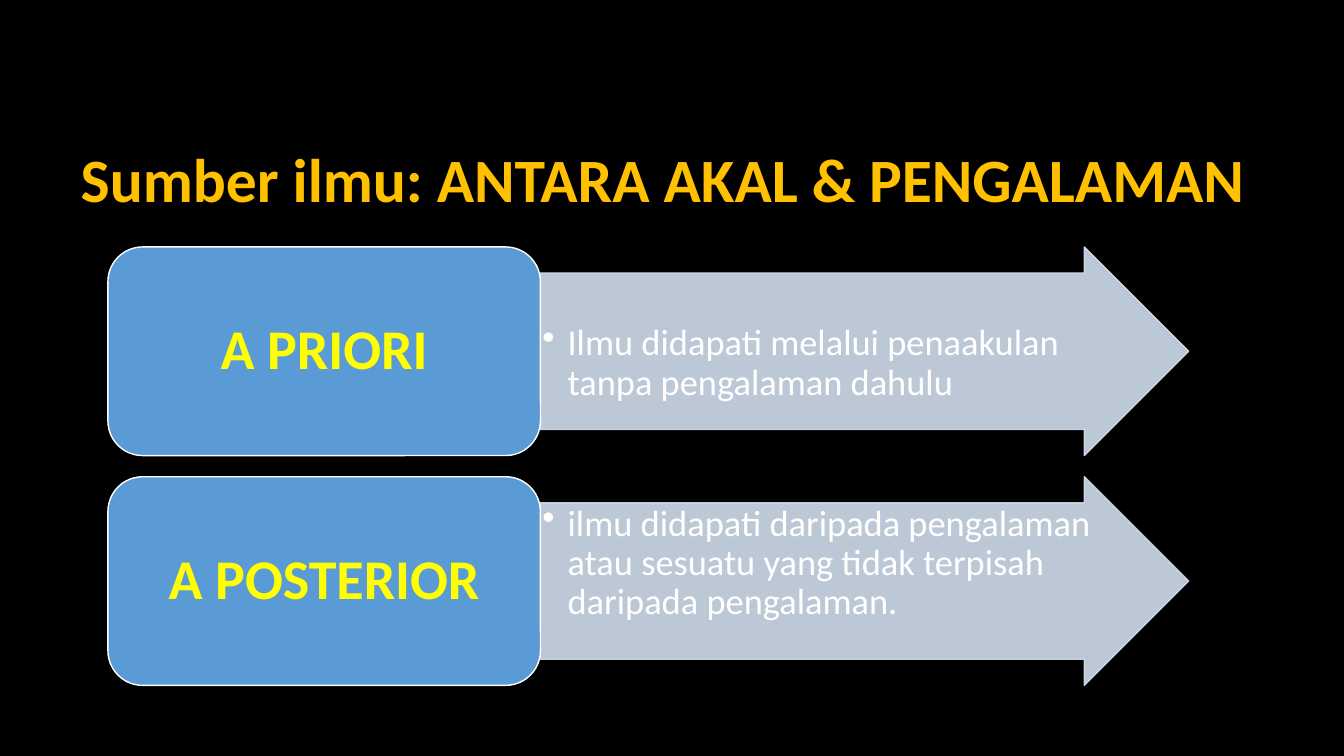
from pptx import Presentation
from pptx.dml.color import RGBColor
from pptx.enum.shapes import MSO_SHAPE as Shape
from pptx.enum.text import MSO_ANCHOR as Anchor, PP_ALIGN as Align
from pptx.oxml.ns import qn
from pptx.util import Inches, Pt
from lxml.etree import SubElement

TITLE = "Sumber ilmu: ANTARA AKAL & PENGALAMAN"
SOURCES = [
    {"name": "A PRIORI", "top_inset": 0.51,
     "meaning": "Ilmu didapati melalui penaakulan tanpa pengalaman dahulu"},
    {"name": "A POSTERIOR", "top_inset": 0.02,
     "meaning": "ilmu didapati daripada pengalaman atau sesuatu yang tidak "
                "terpisah daripada pengalaman."},
]

THEME = {
    "font": "Calibri",
    "background": "000000",
    "arrow": "D2DEEF",
    "card": "5B9BD5",
    "card_line": "FFFFFF",
    "title": {"size": 44, "color": "FFC000", "bold": True},
    "name": {"size": 40, "color": "FFFF00", "bold": True},
    "meaning": {"size": 26, "color": "FFFFFF", "bold": False},
}
TITLE_BOX = (0.56, 1.36, 12.04, 0.9)
LEFT, TOP, CARD_WIDTH, ARROW_WIDTH = 1.07, 2.45, 4.29, 6.43
ROW_HEIGHT, ROW_STEP = 2.07, 2.28


def set_all(target, values):
    for key, value in values.items():
        setattr(target, key, value)


def write(shape, text, style, align, anchor, insets):
    frame = shape.text_frame
    sides = ("margin_left", "margin_top", "margin_right", "margin_bottom")
    set_all(frame, dict(zip(sides, map(Inches, insets))))
    set_all(frame, {"word_wrap": True, "vertical_anchor": anchor})
    para = frame.paragraphs[0]
    set_all(para, {"alignment": align, "line_spacing": 0.9})
    span = para.add_run()
    span.text = text
    set_all(span.font, {"name": THEME["font"], "size": Pt(style["size"]),
                        "bold": style["bold"]})
    span.font.color.rgb = RGBColor.from_string(style["color"])
    return para


def add_block(page, kind, box, fill, line):
    shape = page.shapes.add_shape(kind, *map(Inches, box))
    shape.shadow.inherit = False
    shape.fill.solid()
    shape.fill.fore_color.rgb = RGBColor.from_string(fill)
    shape.line.color.rgb = RGBColor.from_string(line)
    shape.line.width = Pt(1)
    return shape


def set_opacity(shape, percent):
    for color in shape.element.spPr.iter(qn("a:srgbClr")):
        SubElement(color, qn("a:alpha")).set("val", str(percent * 1000))


def add_bullet(para, indent):
    props = para._p.get_or_add_pPr()
    props.set("marL", str(Inches(indent)))
    props.set("indent", str(Inches(-indent)))
    SubElement(props, qn("a:buChar")).set("char", "•")


def add_source(page, source, top):
    arrow = add_block(page, Shape.RIGHT_ARROW,
                      (LEFT + CARD_WIDTH, top, ARROW_WIDTH, ROW_HEIGHT),
                      THEME["arrow"], THEME["arrow"])
    arrow.adjustments[0] = 0.75
    arrow.adjustments[1] = 0.5
    set_opacity(arrow, 90)
    para = write(arrow, source["meaning"], THEME["meaning"], Align.LEFT,
                 Anchor.TOP, (0.02, source["top_inset"], 0.02, 0.02))
    add_bullet(para, 0.25)

    card = add_block(page, Shape.ROUNDED_RECTANGLE,
                     (LEFT, top, CARD_WIDTH, ROW_HEIGHT),
                     THEME["card"], THEME["card_line"])
    write(card, source["name"], THEME["name"], Align.CENTER,
          Anchor.MIDDLE, (0.17, 0.08, 0.17, 0.08))


def main():
    deck = Presentation()
    set_all(deck, {"slide_width": Inches(13.33), "slide_height": Inches(7.5)})
    page = deck.slides.add_slide(deck.slide_layouts[5])
    page.background.fill.solid()
    page.background.fill.fore_color.rgb = RGBColor.from_string(THEME["background"])

    title = page.shapes.title
    set_all(title, dict(zip(("left", "top", "width", "height"),
                            map(Inches, TITLE_BOX))))
    write(title, TITLE, THEME["title"], Align.CENTER, Anchor.MIDDLE,
          (0.1, 0.05, 0.1, 0.05))

    for row, source in enumerate(SOURCES):
        add_source(page, source, TOP + row * ROW_STEP)
    deck.save("out.pptx")


if __name__ == "__main__":
    main()
